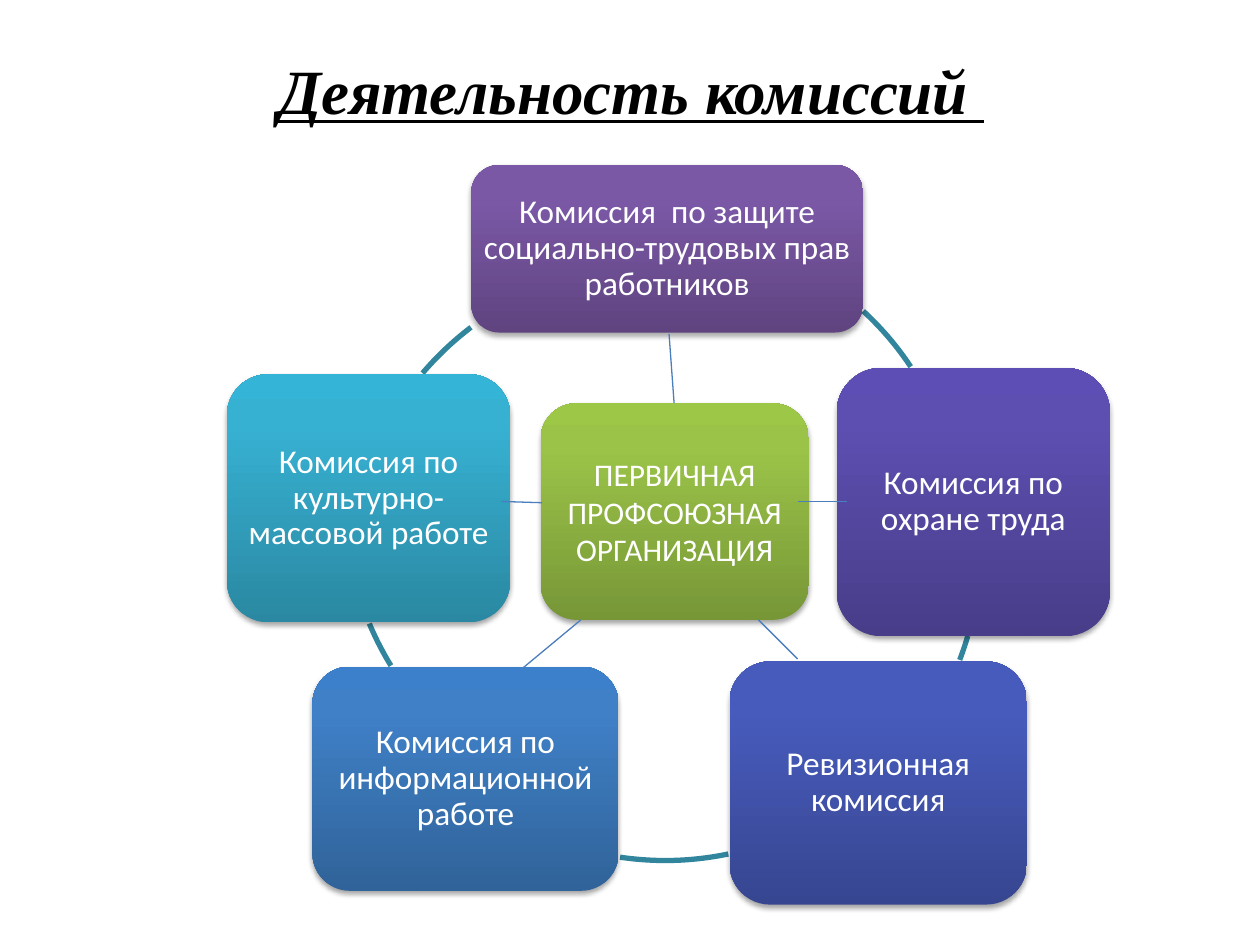
from dataclasses import dataclass
from lxml.etree import SubElement
from pptx import Presentation
from pptx.dml.color import RGBColor
from pptx.enum.shapes import MSO_CONNECTOR, MSO_SHAPE
from pptx.enum.text import MSO_ANCHOR, PP_ALIGN
from pptx.oxml import parse_xml
from pptx.oxml.ns import nsdecls, qn
from pptx.util import Inches, Pt

COLS, ROWS = 100, 75
WIDE, HIGH = Inches(10), Inches(7.5)
RING = 49

HUES = {
    "ring": "31859C", "link": "4B7EBC", "white": "FFFFFF", "black": "000000",
    "plum": "5F4480 7B58A6 7C57A8", "violet": "483D89 5D4FB1 5C4EB4",
    "indigo": "374691 475BBC 455ABF", "blue": "306399 3F80C7 3C80CB",
    "teal": "2A88A2 37B1D2 34B4D6", "green": "779737 9BC348 9DC746",
}


@dataclass
class Node:
    text: str
    hue: str
    col: float
    row: float
    wide: float
    high: float
    size: int = 19
    pad: float = 0.2
    lead: float = 0.9


@dataclass
class Arc:
    col: float
    row: float
    start: float
    end: float


@dataclass
class Link:
    col: float
    row: float
    to_col: float
    to_row: float


NODES = [
    Node("Комиссия  по защите социально-трудовых прав работников",
         "plum", 37.4, 13.1, 31.1, 13.3),
    Node("Комиссия по охране труда", "violet", 66.4, 29.2, 21.7, 21.3),
    Node("Ревизионная комиссия", "indigo", 57.9, 52.5, 23.6, 19.3),
    Node("Комиссия по информационной работе", "blue", 24.8, 52.9, 24.3, 17.8),
    Node("Комиссия по культурно-массовой работе", "teal", 18, 29.7, 22.5, 19.7),
    Node("ПЕРВИЧНАЯ ПРОФСОЮЗНАЯ ОРГАНИЗАЦИЯ",
         "green", 42.9, 32, 21.3, 17.2, size=18, pad=1, lead=1),
]

ARCS = [
    Arc(27.4, 18.2, 312.7, 326.3),
    Arc(28.8, 19.1, 16.3, 21),
    Arc(28.3, 19.3, 78.2, 98.4),
    Arc(27.4, 15.5, 148.4, 157.2),
    Arc(27.7, 21, 220.4, 232.8),
]

LINKS = [
    Link(53.1, 26.5, 53.5, 32),
    Link(67.2, 39.8, 63.3, 39.8),
    Link(39.8, 39.8, 43, 39.9),
    Link(46.1, 49.2, 41.4, 53.1),
    Link(60.2, 49.2, 63.3, 52.3),
]


def across(cols: float) -> int:
    return round(WIDE * cols / COLS)


def down(rows: float) -> int:
    return round(HIGH * rows / ROWS)


def area(col: float, row: float, wide: float, high: float) -> tuple:
    return across(col), down(row), across(wide), down(high)


def tint(name: str) -> RGBColor:
    return RGBColor.from_string(HUES[name])


def write(shape, text: str, *, size: int, face: str = "Calibri",
          hue: str = "white", pad: float = 1, lead: float = 1,
          anchor=MSO_ANCHOR.MIDDLE, strong: bool = False) -> None:
    frame = shape.text_frame
    frame.word_wrap = True
    frame.vertical_anchor = anchor
    frame.margin_left = frame.margin_right = across(pad)
    frame.margin_top = frame.margin_bottom = down(pad / 2)
    para = frame.paragraphs[0]
    para.alignment = PP_ALIGN.CENTER
    para.line_spacing = lead
    run = para.add_run()
    run.text = text
    font = run.font
    font.name, font.size = face, Pt(size)
    font.bold = font.italic = font.underline = strong
    font.color.rgb = tint(hue)


def shade(shape, hue: str) -> None:
    stops = "".join(
        f'<a:gs pos="{pos}"><a:srgbClr val="{code}"/></a:gs>'
        for pos, code in zip((0, 80000, 100000), HUES[hue].split()))
    fill = parse_xml(
        f'<a:gradFill {nsdecls("a")} rotWithShape="1"><a:gsLst>{stops}</a:gsLst>'
        '<a:lin ang="16200000" scaled="0"/></a:gradFill>')
    shape._element.spPr.find(qn("a:prstGeom")).addnext(fill)
    shape.line.fill.background()
    shape.shadow.inherit = False
    glow = parse_xml(
        f'<a:outerShdw {nsdecls("a")} blurRad="{Pt(3.1)}" dist="{Pt(1.8)}" '
        f'dir="5400000" rotWithShape="0"><a:srgbClr val="{HUES["black"]}">'
        '<a:alpha val="35000"/></a:srgbClr></a:outerShdw>')
    shape._element.spPr.find(qn("a:effectLst")).append(glow)


def draw_node(slide, node: Node) -> None:
    shape = slide.shapes.add_shape(
        MSO_SHAPE.ROUNDED_RECTANGLE,
        *area(node.col, node.row, node.wide, node.high))
    shade(shape, node.hue)
    write(shape, node.text, size=node.size, pad=node.pad, lead=node.lead)


def draw_arc(slide, arc: Arc) -> None:
    shape = slide.shapes.add_shape(
        MSO_SHAPE.ARC, *area(arc.col, arc.row, RING, RING))
    for index, angle in enumerate((arc.start, arc.end)):
        shape.adjustments[index] = angle * 0.6
    shape.shadow.inherit = False
    shape.fill.background()
    shape.line.color.rgb = tint("ring")
    shape.line.width = Pt(3)


def draw_link(slide, link: Link) -> None:
    line = slide.shapes.add_connector(
        MSO_CONNECTOR.STRAIGHT, across(link.col), down(link.row),
        across(link.to_col), down(link.to_row))
    line.line.color.rgb = tint("link")
    line.line.width = Pt(0.75)
    SubElement(line._element.spPr, qn("a:effectLst"))


def main() -> None:
    deck = Presentation()
    deck.slide_width, deck.slide_height = WIDE, HIGH
    slide = deck.slides.add_slide(deck.slide_layouts[6])
    for arc in ARCS:
        draw_arc(slide, arc)
    for node in NODES:
        draw_node(slide, node)
    title = slide.shapes.add_textbox(*area(5.1, 3.6, 90, 7.8))
    write(title, "Деятельность комиссий ", size=36, face="Times New Roman",
          hue="black", anchor=MSO_ANCHOR.TOP, strong=True)
    for link in LINKS:
        draw_link(slide, link)
    deck.save("out.pptx")


if __name__ == "__main__":
    main()
